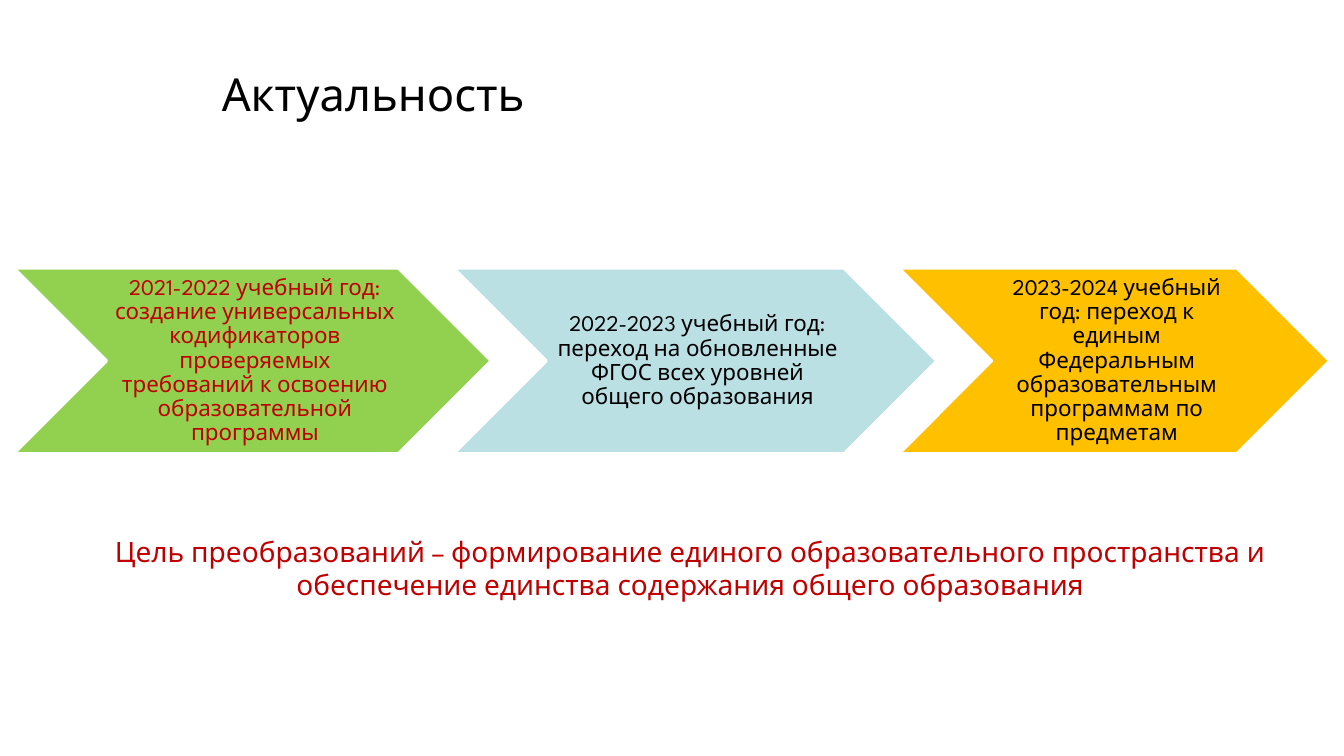
from pptx import Presentation
from pptx.dml.color import RGBColor
from pptx.enum import shapes, text
from pptx.util import Pt

FONT = "League Spartan"
BLACK = RGBColor(0x00, 0x00, 0x00)
WHITE = RGBColor(0xFF, 0xFF, 0xFF)
RED = RGBColor(0xC0, 0x00, 0x00)
GREEN = RGBColor(0x92, 0xD0, 0x50)
PALE_BLUE = RGBColor(0xBB, 0xE0, 0xE3)
AMBER = RGBColor(0xFF, 0xC0, 0x00)

YEARS = [
    (0, 340.6, GREEN, RED,
     "2021-2022 учебный год: создание универсальных кодификаторов "
     "проверяемых требований к освоению образовательной программы"),
    (314, 344.9, PALE_BLUE, BLACK,
     "2022-2023 учебный год: переход на обновленные ФГОС всех уровней общего образования"),
    (632.2, 307.4, AMBER, BLACK,
     "2023-2024 учебный год: переход к единым Федеральным образовательным программам по предметам"),
]


def write(shape, wording, size, color, align, anchor):
    frame = shape.text_frame
    frame.text = wording
    frame.word_wrap = True
    frame.auto_size = text.MSO_AUTO_SIZE.NONE
    frame.vertical_anchor = anchor
    paragraph = frame.paragraphs[0]
    paragraph.alignment = align
    font = paragraph.runs[0].font
    font.name = FONT
    font.size = Pt(size)
    font.color.rgb = color
    return paragraph


def add_title(slide, left, top, width, height):
    title = slide.shapes.title
    title.left, title.top = Pt(left), Pt(top)
    title.width, title.height = Pt(width), Pt(height)
    write(title, "Актуальность", 32.4, BLACK, text.PP_ALIGN.LEFT, text.MSO_ANCHOR.MIDDLE)


def add_timeline(slide, left, top, height):
    for offset, width, fill, color, wording in YEARS:
        chevron = slide.shapes.add_shape(
            shapes.MSO_SHAPE.CHEVRON, Pt(left + offset), Pt(top), Pt(width), Pt(height))
        chevron.shadow.inherit = False
        chevron.fill.solid()
        chevron.fill.fore_color.rgb = fill
        chevron.line.color.rgb = WHITE
        chevron.line.width = Pt(2)
        frame = chevron.text_frame
        frame.margin_left = Pt(5)
        frame.margin_top = frame.margin_right = frame.margin_bottom = Pt(1.5)
        paragraph = write(chevron, wording, 16, color,
                          text.PP_ALIGN.CENTER, text.MSO_ANCHOR.MIDDLE)
        paragraph.line_spacing = 0.9


def add_goal(slide, left, top, width, height):
    goal = slide.shapes.add_textbox(Pt(left), Pt(top), Pt(width), Pt(height))
    write(goal,
          "Цель преобразований – формирование единого образовательного пространства "
          "и обеспечение единства содержания общего образования",
          20, RED, text.PP_ALIGN.CENTER, text.MSO_ANCHOR.TOP)


def main():
    presentation = Presentation()
    presentation.slide_width, presentation.slide_height = Pt(960), Pt(540)
    slide = presentation.slides.add_slide(presentation.slide_layouts.get_by_name("Title Only"))
    add_title(slide, 151.2, 47.5, 766.8, 38.9)
    add_timeline(slide, 10.1, 191.6, 132.4)
    add_goal(slide, 37.4, 378, 910.8, 73.4)
    presentation.save("out.pptx")


if __name__ == "__main__":
    main()
